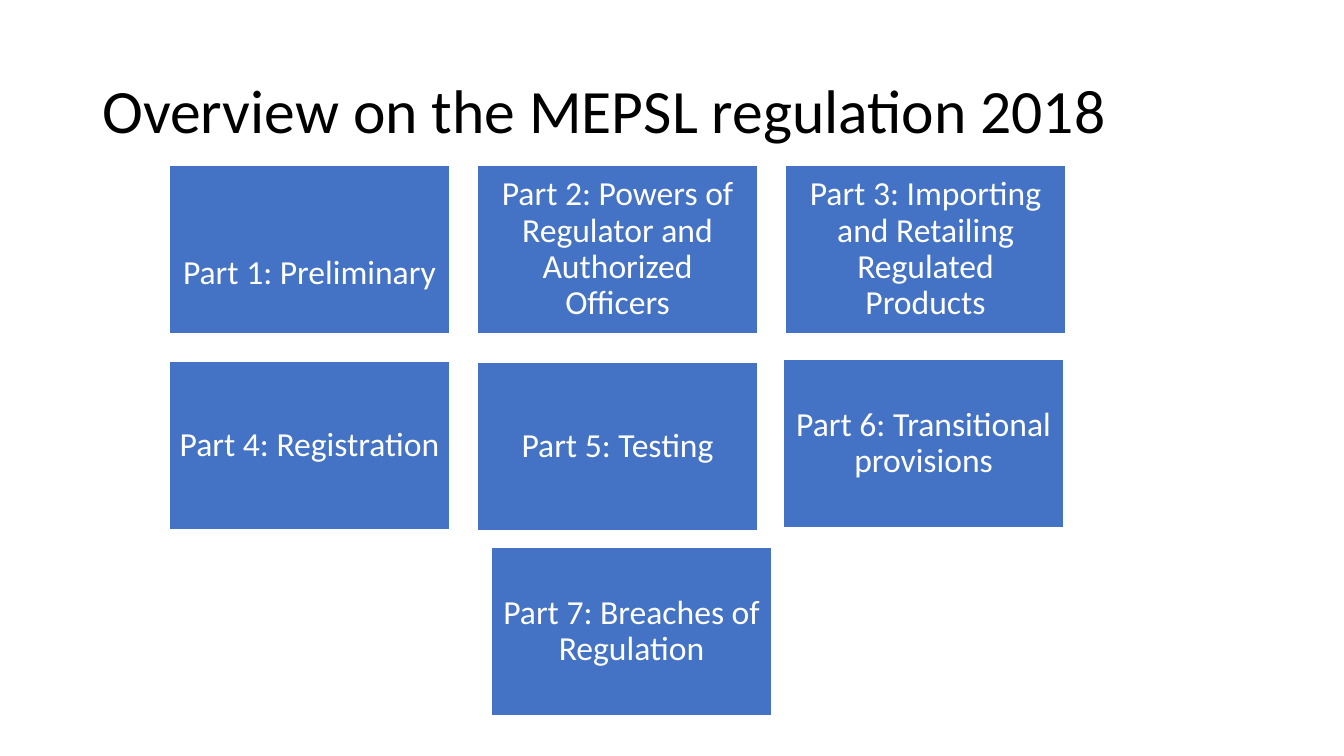
"""Builds the overview slide of the MEPSL regulation 2018 with its seven parts."""
from pptx import Presentation
from pptx.dml.color import RGBColor
from pptx.enum.shapes import MSO_SHAPE
from pptx.enum.text import MSO_ANCHOR, PP_ALIGN
from pptx.util import Pt

RECT = MSO_SHAPE.RECTANGLE
MIDDLE = MSO_ANCHOR.MIDDLE
LEFT, CENTER = PP_ALIGN.LEFT, PP_ALIGN.CENTER

BOX_W, BOX_H = 200.2, 120.2
COL_1, COL_2, COL_3 = [121 + 220 * i for i in range(3)]
INSET = 7.2
PARTS = [
    ("Part 1: Preliminary", COL_1, 118, 42.2),
    ("Part 2: Powers of Regulator and Authorized Officers", COL_2, 118, INSET),
    ("Part 3: Importing and Retailing Regulated Products", COL_3, 118, INSET),
    ("Part 4: Registration", COL_1, 258, INSET),
    ("Part 5: Testing", COL_2, 259, INSET),
    ("Part 6: Transitional provisions", 559.6, 257, INSET),
    ("Part 7: Breaches of Regulation", 351, 391, INSET),
]


def rgb(value):
    return RGBColor.from_string(value)


def write(shape, text, size, color, align, frame):
    tf = shape.text_frame
    for name, value in frame.items():
        setattr(tf, name, value)
    p = tf.paragraphs[0]
    p.alignment = align
    p.line_spacing = 0.9
    r = p.add_run()
    r.text = text
    for name, value in {"name": "Calibri", "size": Pt(size)}.items():
        setattr(r.font, name, value)
    r.font.color.rgb = rgb(color)


prs = Presentation()
prs.slide_width, prs.slide_height = Pt(960), Pt(540)
s = prs.slides.add_slide(prs.slide_layouts[6])

title = s.shapes.add_textbox(Pt(66), Pt(28.8), Pt(828), Pt(104.4))
write(title, "Overview on the MEPSL regulation 2018", 44, "000000", LEFT,
      {"word_wrap": True, "vertical_anchor": MIDDLE})

for text, x, y, top in PARTS:
    sp = s.shapes.add_shape(RECT, Pt(x), Pt(y), Pt(BOX_W), Pt(BOX_H))
    sp.shadow.inherit = False
    sp.fill.solid()
    sp.fill.fore_color.rgb = rgb("4472C4")
    sp.line.color.rgb = rgb("FFFFFF")
    sp.line.width = Pt(1)
    write(sp, text, 24, "FFFFFF", CENTER,
          {"word_wrap": True, "vertical_anchor": MIDDLE,
           "margin_left": Pt(INSET), "margin_right": Pt(INSET),
           "margin_top": Pt(top), "margin_bottom": Pt(INSET)})

prs.save("out.pptx")
